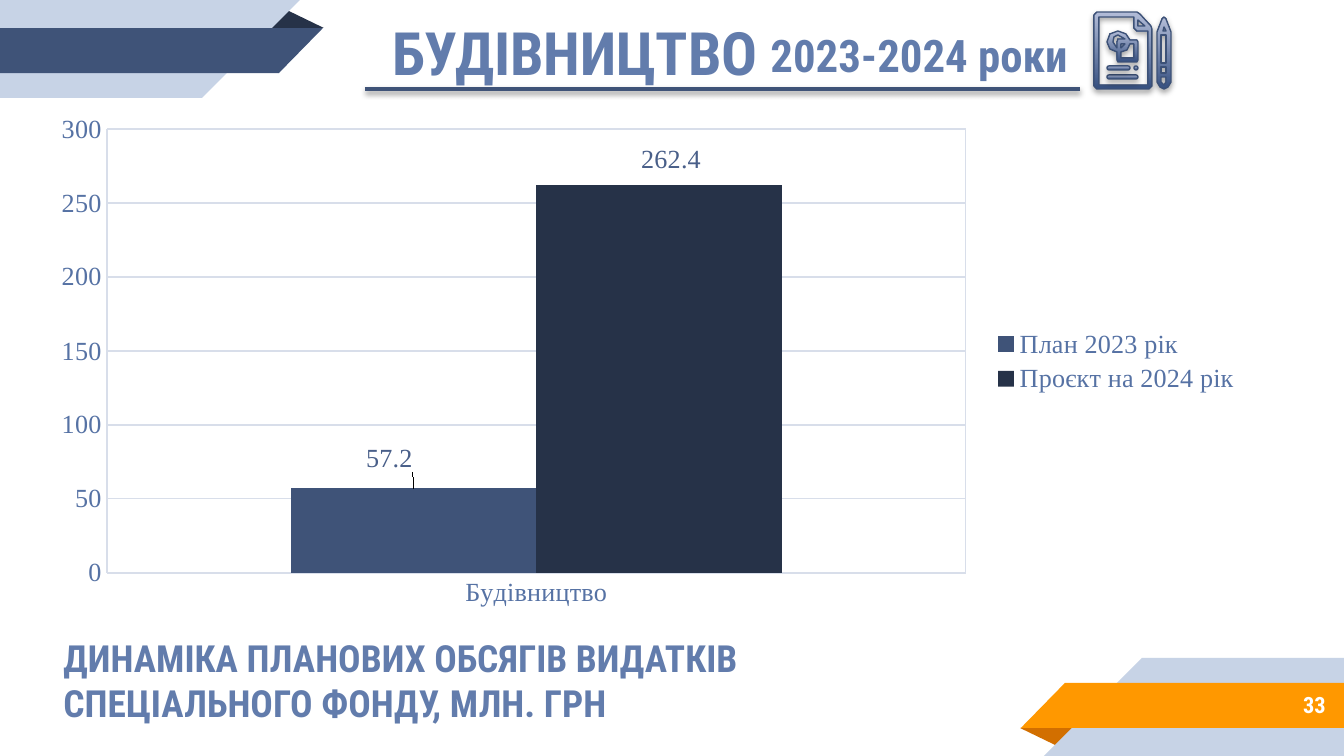
from dataclasses import dataclass
from typing import Any, NamedTuple

import pptx
import pptx.chart.data
import pptx.dml.color
import pptx.enum.chart
import pptx.enum.shapes
import pptx.enum.text
import pptx.oxml
import pptx.oxml.ns
import pptx.util

EMU_PER_PX = 914400 / 134.4
SLIDE_WIDTH, SLIDE_HEIGHT = 1344, 756
SHAPES = pptx.enum.shapes.MSO_SHAPE
ALIGN = pptx.enum.text.PP_ALIGN
ANCHOR = pptx.enum.text.MSO_ANCHOR


def rgb(value: str) -> pptx.dml.color.RGBColor:
    return pptx.dml.color.RGBColor.from_string(value)


@dataclass(frozen=True)
class Theme:
    heading_font: str = "Roboto Condensed"
    chart_font: str = "Times New Roman"
    title_size: int = 32
    period_size: int = 24
    caption_size: int = 20
    number_size: int = 12
    chart_size: int = 14
    heading: str = "627CAC"
    white: str = "FFFFFF"
    pale: str = "C7D3E6"
    blue: str = "3F5378"
    navy: str = "263248"
    orange: str = "FF9800"
    dark_orange: str = "D26F00"
    axis_text: str = "5672A4"
    label_text: str = "495F89"
    grid: str = "D8DEEA"
    icon_line: str = "3C5177"
    icon_dark: str = "365081"
    icon_light: str = "B3BDD8"


THEME = Theme()


class Box(NamedTuple):
    left: int
    top: int
    width: int
    height: int


class RibbonPart(NamedTuple):
    box: Box
    kind: Any
    role: str
    rotation: int


class Series(NamedTuple):
    name: str
    value: float
    color: str
    label_shift: tuple[float, float]


RIBBON = [
    RibbonPart(Box(266, 9, 58, 19), SHAPES.ISOSCELES_TRIANGLE, "fold", 0),
    RibbonPart(Box(0, 0, 202, 98), SHAPES.RECTANGLE, "back", 180),
    RibbonPart(Box(202, 0, 98, 98), SHAPES.RIGHT_TRIANGLE, "back", 180),
    RibbonPart(Box(0, 28, 279, 45), SHAPES.RECTANGLE, "front", 180),
    RibbonPart(Box(279, 28, 44, 45), SHAPES.RIGHT_TRIANGLE, "front", 180),
]
SERIES = [
    Series("План 2023 рік", 57.2, THEME.blue, (-0.02, -0.02)),
    Series("Проєкт на 2024 рік", 262.4, THEME.navy, (0.01, -0.01)),
]
CHART_BOX = Box(38, 105, 1216, 513)
PLOT_BOX = Box(107, 129, 859, 444)

# Icon outlines: the first contour is the edge, the others are holes
PAGE = [
    [(1097, 12), (1137, 12), (1140, 14), (1151, 26), (1152, 29), (1152, 86),
     (1149, 89), (1097, 89), (1094, 86), (1094, 15)],
    [(1134, 17), (1134, 28), (1137, 31), (1148, 31), (1148, 85), (1099, 85), (1099, 17)],
    [(1138, 20), (1145, 26), (1138, 26)],
]
DRAWING = [
    [(1118, 31), (1126, 34), (1130, 40), (1137, 40), (1138, 42), (1138, 60), (1137, 62),
     (1118, 62), (1117, 60), (1117, 52), (1110, 49), (1107, 42), (1110, 34)],
    [(1118, 35), (1125, 39), (1118, 39), (1117, 42), (1117, 48), (1113, 42), (1114, 37)],
    [(1121, 44), (1125, 44), (1121, 48)],
    [(1134, 44), (1134, 58), (1121, 58), (1121, 52), (1127, 50), (1130, 44)],
]
PENCIL = [
    [(1164, 17), (1166, 19), (1171, 32), (1171, 82), (1168, 87), (1164, 89),
     (1160, 87), (1157, 82), (1157, 32), (1162, 19)],
    [(1164, 27), (1166, 31), (1163, 31)],
    [(1161, 35), (1166, 35), (1166, 63), (1161, 63)],
    [(1161, 67), (1166, 67), (1166, 73), (1161, 73)],
    [(1161, 77), (1166, 77), (1166, 82), (1164, 85), (1161, 82)],
]
TEXT_LINES = [Box(1107, 75, 31, 4), Box(1107, 66, 23, 4), Box(1134, 66, 4, 4)]


def px(length: int) -> int:
    return round(length * EMU_PER_PX)


def apply(target: Any, values: dict[str, Any]) -> None:
    for name, value in values.items():
        setattr(target, name, value)


def place(shape: Any, box: Box) -> None:
    apply(shape, {name: px(value) for name, value in box._asdict().items()})


def format_font(font: Any, name: str, size: int, color: str, bold: bool = False) -> None:
    apply(font, {"name": name, "size": pptx.util.Pt(size), "bold": bold})
    font.color.rgb = rgb(color)


def format_line(line: Any, color: str, width: float) -> None:
    line.color.rgb = rgb(color)
    line.width = pptx.util.Pt(width)


def add_shadow(shape: Any, opacity: int, distance: float) -> None:
    shape._element.spPr.append(pptx.oxml.parse_xml(
        f'<a:effectLst {pptx.oxml.ns.nsdecls("a")}><a:outerShdw blurRad="{pptx.util.Pt(3.1)}" '
        f'dist="{pptx.util.Pt(distance)}" dir="5400000" algn="t" rotWithShape="0">'
        f'<a:srgbClr val="000000"><a:alpha val="{opacity * 1000}"/></a:srgbClr>'
        '</a:outerShdw></a:effectLst>'))


def write_text(shape: Any, box: Box, lines: list[str], size: int, color: str,
               anchor: Any = ANCHOR.BOTTOM, align: Any = ALIGN.LEFT) -> None:
    place(shape, box)
    frame = shape.text_frame
    margins = {f"margin_{side}": pptx.util.Inches(0.1) for side in ("left", "top", "right", "bottom")}
    apply(frame, margins | {"text": "\n".join(lines), "word_wrap": True, "vertical_anchor": anchor,
                            "auto_size": pptx.enum.text.MSO_AUTO_SIZE.NONE})
    for paragraph in frame.paragraphs:
        apply(paragraph, {"alignment": align, "space_before": pptx.util.Pt(0), "line_spacing": 1.0})
        format_font(paragraph.runs[0].font, THEME.heading_font, size, color, True)


def add_ribbon(slide: Any, colors: dict[str, str], opposite: bool = False) -> None:
    """Draw the corner ribbon; opposite turns it about the slide centre."""
    for box, kind, role, rotation in RIBBON:
        if opposite:
            box = Box(SLIDE_WIDTH - box.left - box.width, SLIDE_HEIGHT - box.top - box.height,
                      box.width, box.height)
        shape = slide.shapes.add_shape(kind, *map(px, box))
        shape.rotation = (rotation + 180 * opposite) % 360
        if role == "fold":
            shape.adjustments[0] = 0.324
        else:
            shape._element.spPr.get_or_add_xfrm().set("flipH", "1")
        shape.fill.solid()
        shape.fill.fore_color.rgb = rgb(colors[role])
        shape.line.fill.background()
        shape.shadow.inherit = False


def set_layout(parent: Any, index: int, target: str, values: dict[str, float]) -> None:
    modes = "".join(f'<c:{axis}Mode val="edge"/>' for axis in "xy") if target else ""
    items = "".join(f'<c:{name} val="{value:.4f}"/>' for name, value in values.items())
    for existing in parent.findall(pptx.oxml.ns.qn("c:layout")):
        parent.remove(existing)
    parent.insert(index, pptx.oxml.parse_xml(
        f'<c:layout {pptx.oxml.ns.nsdecls("c")}><c:manualLayout>{target}{modes}{items}'
        '</c:manualLayout></c:layout>'))


def add_spending_chart(slide: Any) -> None:
    data = pptx.chart.data.CategoryChartData()
    data.categories = ["Будівництво"]
    for item in SERIES:
        data.add_series(item.name, [item.value])
    chart = slide.shapes.add_chart(pptx.enum.chart.XL_CHART_TYPE.COLUMN_CLUSTERED,
                                   *map(px, CHART_BOX), data).chart
    apply(chart, {"has_title": False, "has_legend": True})
    apply(chart.legend, {"position": pptx.enum.chart.XL_LEGEND_POSITION.RIGHT, "include_in_layout": False})
    text = (THEME.chart_font, THEME.chart_size)
    format_font(chart.font, *text, THEME.navy)
    format_font(chart.legend.font, *text, THEME.axis_text)
    for axis in (chart.category_axis, chart.value_axis):
        no_tick = pptx.enum.chart.XL_TICK_MARK.NONE
        apply(axis, {"has_major_gridlines": True, "major_tick_mark": no_tick, "minor_tick_mark": no_tick})
        format_font(axis.tick_labels.font, *text, THEME.axis_text)
        axis.format.line.fill.background()
        format_line(axis.major_gridlines.format.line, THEME.grid, 0.75)
    apply(chart.value_axis, {"minimum_scale": 0, "maximum_scale": 300, "major_unit": 50})
    plot = chart.plots[0]
    apply(plot, {"gap_width": 150, "overlap": 0, "vary_by_categories": False})
    for series, item in zip(plot.series, SERIES):
        series.format.fill.solid()
        series.format.fill.fore_color.rgb = rgb(item.color)
        label = series.points[0].data_label
        format_font(label.font, *text, THEME.label_text)
        label.position = pptx.enum.chart.XL_LABEL_POSITION.OUTSIDE_END
        element = next(series._element.iter(pptx.oxml.ns.qn("c:dLbl")))
        set_layout(element, 1, "", dict(zip("xy", item.label_shift)))
    plot_area = next(chart._chartSpace.iter(pptx.oxml.ns.qn("c:plotArea")))
    set_layout(plot_area, 0, '<c:layoutTarget val="inner"/>', {
        "x": (PLOT_BOX.left - CHART_BOX.left) / CHART_BOX.width,
        "y": (PLOT_BOX.top - CHART_BOX.top) / CHART_BOX.height,
        "w": PLOT_BOX.width / CHART_BOX.width, "h": PLOT_BOX.height / CHART_BOX.height})


def add_outline(slide: Any, contours: list[list[tuple[int, int]]]) -> Any:
    builder = slide.shapes.build_freeform(*contours[0][0], scale=EMU_PER_PX)
    for contour in contours:
        if contour is not contours[0]:
            builder.move_to(*contour[0])
        builder.add_line_segments(contour[1:], close=True)
    return builder.convert_to_shape()


def add_plan_icon(slide: Any) -> None:
    parts = [add_outline(slide, contours) for contours in (DRAWING, PAGE, PENCIL)]
    parts += [slide.shapes.add_shape(SHAPES.ROUNDED_RECTANGLE, *map(px, box)) for box in TEXT_LINES]
    for part in parts:
        if part.adjustments:
            part.adjustments[0] = 0.5
        part.fill.gradient()
        part.fill.gradient_angle = 90
        for position, (stop, color) in enumerate(
                zip(part.fill.gradient_stops, (THEME.icon_dark, THEME.icon_light))):
            stop.position = position
            stop.color.rgb = rgb(color)
        format_line(part.line, THEME.icon_line, 0.75)
        add_shadow(part, 35, 1.8)


def main() -> None:
    presentation = pptx.Presentation()
    apply(presentation, {"slide_width": px(SLIDE_WIDTH), "slide_height": px(SLIDE_HEIGHT)})
    slide = presentation.slides.add_slide(presentation.slide_layouts.get_by_name("Comparison"))
    holders = {holder.placeholder_format.idx: holder for holder in slide.placeholders}
    for unused in (2, 4):
        holders[unused]._element.getparent().remove(holders[unused]._element)

    # Corner ribbons
    add_ribbon(slide, {"fold": THEME.navy, "back": THEME.pale, "front": THEME.blue})
    add_ribbon(slide, {"fold": THEME.dark_orange, "back": THEME.pale, "front": THEME.orange}, True)

    # Heading, caption and page number
    write_text(holders[0], Box(379, -51, 755, 152), ["БУДІВНИЦТВО"], THEME.title_size, THEME.heading)
    write_text(holders[3], Box(757, 9, 755, 86), ["2023-2024 роки"], THEME.period_size, THEME.heading)
    write_text(holders[1], Box(50, 652, 984, 86),
               ["ДИНАМІКА ПЛАНОВИХ ОБСЯГІВ ВИДАТКІВ", "СПЕЦІАЛЬНОГО ФОНДУ, МЛН. ГРН"],
               THEME.caption_size, THEME.heading)
    number_box = Box(1120, 681, 219, 47)
    write_text(slide.shapes.add_textbox(*map(px, number_box)), number_box, ["33"],
               THEME.number_size, THEME.white, ANCHOR.MIDDLE, ALIGN.RIGHT)

    # Chart, heading rule and icon
    add_spending_chart(slide)
    rule = slide.shapes.add_connector(pptx.enum.shapes.MSO_CONNECTOR.STRAIGHT,
                                      *map(px, (365, 89, 1080, 89)))
    format_line(rule.line, THEME.blue, 2)
    add_shadow(rule, 38, 1.6)
    add_plan_icon(slide)
    presentation.save("out.pptx")


if __name__ == "__main__":
    main()
